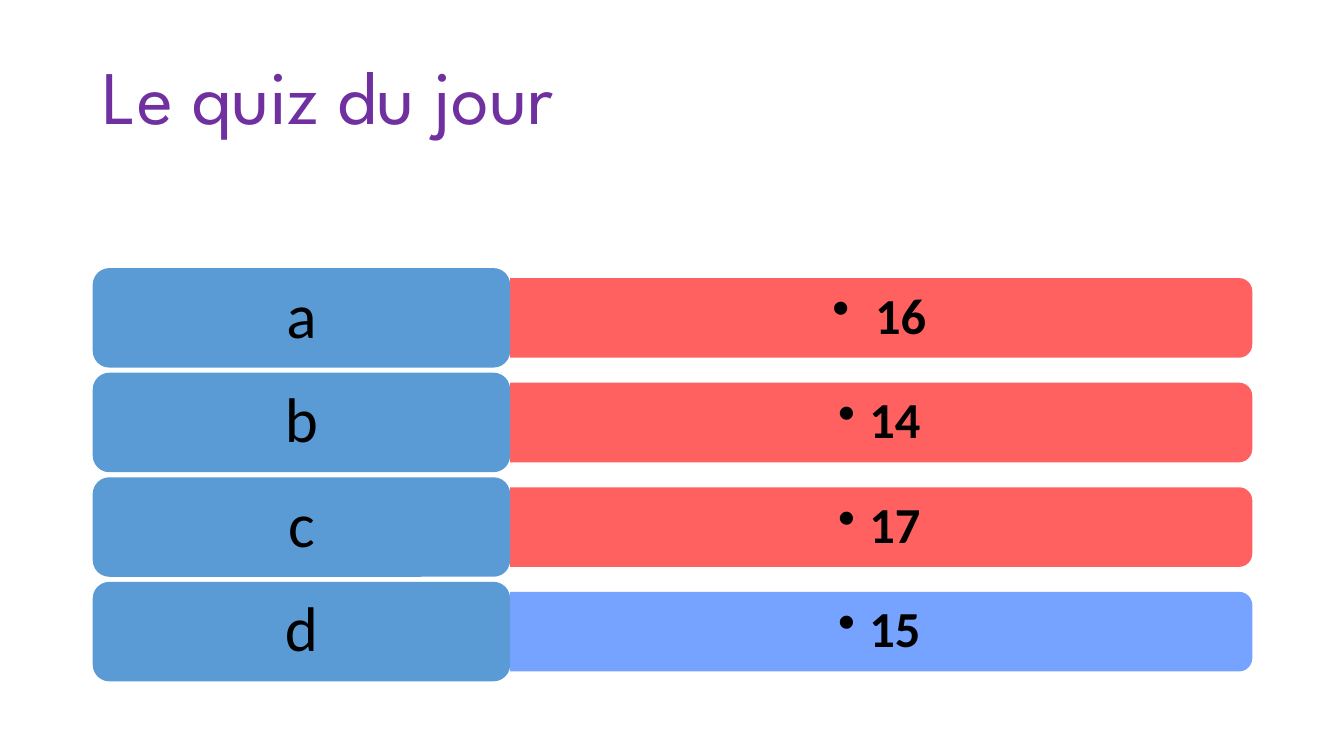
from lxml.etree import SubElement
from pptx import Presentation
from pptx.dml.color import RGBColor
from pptx.enum.shapes import MSO_SHAPE
from pptx.enum.text import MSO_ANCHOR, PP_ALIGN
from pptx.oxml.ns import qn
from pptx.util import Inches, Pt

WIDE, HIGH = 13.33, 7.5
LEFT, SPAN = 0.92, 11.5
BLUE, RED, PALE = "5B9BD5", "FF5050", "6699FF"
ROWS = [("a", " 16", RED), ("b", "14", RED), ("c", "17", RED), ("d", "15", PALE)]


def color(code):
    """Turn a hex string into a colour."""
    return RGBColor.from_string(code)


def write(shape, text, size, font, code, align, pad, bold=False):
    """Write one run into a shape and return its paragraph."""
    frame = shape.text_frame
    frame.word_wrap = True
    frame.vertical_anchor = MSO_ANCHOR.MIDDLE
    frame.margin_left = frame.margin_right = Inches(pad)
    frame.margin_top = frame.margin_bottom = Inches(pad / 2)
    para = frame.paragraphs[0]
    para.alignment = align
    para.line_spacing = 0.9
    run = para.add_run()
    run.text = text
    run.font.size = Pt(size)
    run.font.name = font
    run.font.bold = bold
    run.font.color.rgb = color(code)
    return para


def block(group, kind, box, code):
    """Add a plain filled shape without outline."""
    shape = group.shapes.add_shape(kind, *map(Inches, box))
    shape.shadow.inherit = False
    shape.fill.solid()
    shape.fill.fore_color.rgb = color(code)
    shape.line.fill.background()
    return shape


def bullet(para):
    """Give a paragraph a round bullet with a hanging indent."""
    para.level = 1
    props = para._p.get_or_add_pPr()
    props.set("marL", str(Inches(0.31)))
    props.set("indent", str(Inches(-0.31)))
    SubElement(props, qn("a:buChar"), char="•")


def answer(group, box, text, code):
    """Draw a bar rounded on its right side, with its bulleted value."""
    x, y, w, h = box
    turned = (x + (w - h) / 2, y + (h - w) / 2, h, w)
    bar = block(group, MSO_SHAPE.ROUND_2_SAME_RECTANGLE, turned, code)
    bar.rotation = 90
    tint = bar._element.spPr.find(qn("a:solidFill"))[0]
    SubElement(tint, qn("a:alpha"), val="90000")
    inner = (x, y + h * 0.05, w * 0.995, h * 0.9)
    value = group.shapes.add_textbox(*map(Inches, inner))
    bullet(write(value, text, 36, "Calibri", "000000", PP_ALIGN.CENTER, 0.15, True))


def quiz(slide, box, rows):
    """Stack the lettered choices and their answers in a box."""
    x, y, w, h = box
    gap = 0.05
    tall = (h - gap * (len(rows) - 1)) / len(rows)
    side = w * 0.36
    group = slide.shapes.add_group_shape()
    for i, (name, text, code) in enumerate(rows):
        top = y + i * (tall + gap)
        answer(group, (x + side, top + tall * 0.1, w - side, tall * 0.8), text, code)
        label = block(group, MSO_SHAPE.ROUNDED_RECTANGLE, (x, top, side, tall), BLUE)
        write(label, name, 45, "Calibri", "000000", PP_ALIGN.CENTER, 0.19)


def title(slide, box, text):
    """Write the slide title in a box."""
    shape = slide.shapes.add_textbox(*map(Inches, box))
    write(shape, text, 54, "League Spartan", "7030A0", PP_ALIGN.LEFT, 0.1)


def main():
    """Build the quiz slide and save it."""
    deck = Presentation()
    deck.slide_width, deck.slide_height = Inches(WIDE), Inches(HIGH)
    slide = deck.slides.add_slide(deck.slide_layouts[6])
    quiz(slide, (LEFT, 2.66, SPAN, 4.1), ROWS)
    title(slide, (LEFT, 0.27, SPAN, 1.45), "Le quiz du jour")
    deck.save("out.pptx")


if __name__ == "__main__":
    main()
